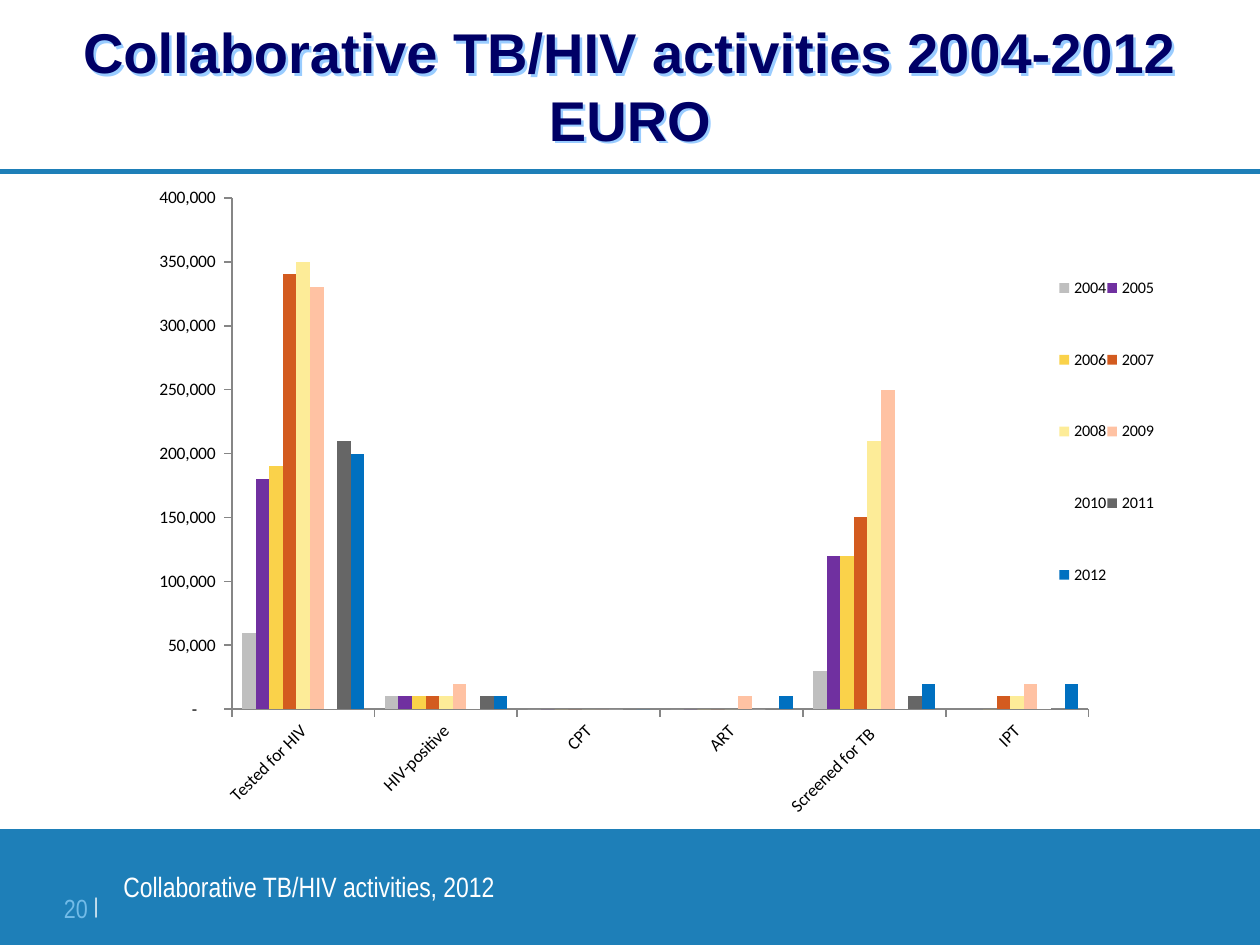
from lxml import etree
from pptx import Presentation
from pptx.chart.data import CategoryChartData
from pptx.dml.color import RGBColor
from pptx.enum.chart import XL_CHART_TYPE, XL_LEGEND_POSITION, XL_TICK_MARK
from pptx.enum.shapes import MSO_CONNECTOR, MSO_SHAPE
from pptx.enum.text import MSO_ANCHOR, MSO_AUTO_SIZE, PP_ALIGN
from pptx.oxml import parse_xml
from pptx.oxml.ns import nsdecls, qn
from pptx.util import Inches, Pt

COLUMN = XL_CHART_TYPE.COLUMN_CLUSTERED
RIGHT = XL_LEGEND_POSITION.RIGHT
OUT = XL_TICK_MARK.OUTSIDE
STRAIGHT = MSO_CONNECTOR.STRAIGHT
RECT = MSO_SHAPE.RECTANGLE
MIDDLE = MSO_ANCHOR.MIDDLE
NO_FIT = MSO_AUTO_SIZE.NONE
CENTRE, TO_RIGHT, TO_LEFT = PP_ALIGN.CENTER, PP_ALIGN.RIGHT, PP_ALIGN.LEFT

WIDE, HIGH = 10, 7.5
CHART = (1.06, 1.39, 8.27, 5.2)
HUES = {"band": "1E7FB8", "navy": "000066", "glow": "99CCFF", "pale": "72BBE8",
        "white": "FFFFFF", "black": "000000", "axis": "868686"}
GROUPS = ["Tested for HIV", "HIV-positive", "CPT", "ART", "Screened for TB ", "IPT"]
YEARS = {
    "2004": ("BFBFBF", [60000, 10000, 0, 0, 30000, None]),
    "2005": ("7030A0", [180000, 10000, 0, 0, 120000, None]),
    "2006": ("FAD24A", [190000, 10000, 0, 0, 120000, 0]),
    "2007": ("D35B1F", [340000, 10000, 0, 0, 150000, 10000]),
    "2008": ("FDEC98", [350000, 10000, 0, 0, 210000, 10000]),
    "2009": ("FFC2A3", [330000, 20000, 0, 10000, 250000, 20000]),
    "2010": ("FFFFFF", [190000, 10000, 0, 0, 10000, 10000]),
    "2011": ("666666", [210000, 10000, 0, 0, 10000, 0]),
    "2012": ("0070C0", [200000, 10000, 0, 10000, 20000, 20000]),
}


def tint(hue):
    return RGBColor.from_string(HUES.get(hue, hue))


def box(left, top, width, height):
    return [Inches(n) for n in (left, top, width, height)]


def style(font, size, hue, face):
    font.size, font.name = Pt(size), face
    font.color.rgb = tint(hue)


def clear(frame):
    """Zero the margins and keep the frame at its set size."""
    frame.margin_left = frame.margin_right = 0
    frame.margin_top = frame.margin_bottom = 0
    frame.word_wrap, frame.auto_size = True, NO_FIT


def add_run(para, text, size, hue, face):
    run = para.add_run()
    run.text = text
    style(run.font, size, hue, face)
    return run


def add_title(slide, lines):
    title = slide.shapes.title
    title.left, title.top, title.width, title.height = box(0, 0, WIDE, 1.35)
    title.fill.background()
    title._element.spPr.append(parse_xml(
        f'<a:effectLst {nsdecls("a")}>'
        '<a:outerShdw dist="25400" dir="2700000" algn="ctr" rotWithShape="0">'
        f'<a:srgbClr val="{HUES["glow"]}"/></a:outerShdw></a:effectLst>'))
    frame = title.text_frame
    clear(frame)
    frame.vertical_anchor = MIDDLE
    para = frame.paragraphs[0]
    para.alignment = CENTRE
    for row, line in enumerate(lines):
        if row:
            para.add_line_break()
        add_run(para, line, 32, "navy", "Arial").font.bold = True


def add_rule(slide, top):
    rule = slide.shapes.add_connector(
        STRAIGHT, 0, Inches(top), Inches(WIDE), Inches(top))
    rule.line.color.rgb, rule.line.width = tint("band"), Pt(3)
    etree.SubElement(rule._element.spPr, qn("a:effectLst"))


def add_band(slide, top):
    band = slide.shapes.add_shape(RECT, *box(0, top, WIDE, HIGH - top))
    band.shadow.inherit = False
    band.fill.solid()
    band.fill.fore_color.rgb = tint("band")
    band.line.fill.background()


def add_note(slide, place, parts, align):
    frame = slide.shapes.add_textbox(*box(*place)).text_frame
    clear(frame)
    para = frame.paragraphs[0]
    para.alignment = align
    return [add_run(para, text, size, hue, "Arial Narrow")
            for text, size, hue in parts]


def set_place(part, place, inner=False):
    """Fix a chart part at left, top, width, height in inches in the chart."""
    old = part.find(qn("c:layout"))
    if old is not None:
        part.remove(old)
    target = '<c:layoutTarget val="inner"/>' if inner else ""
    modes = '<c:xMode val="edge"/><c:yMode val="edge"/>'
    spans = CHART[2:] * 2
    sides = "".join(f'<c:{key} val="{size / span:.4f}"/>'
                    for key, size, span in zip("xywh", place, spans))
    layout = parse_xml(f'<c:layout {nsdecls("c")}><c:manualLayout>{target}'
                       f'{modes}{sides}</c:manualLayout></c:layout>')
    if inner:
        part.insert(0, layout)
    else:
        part.find(qn("c:legendPos")).addnext(layout)


def set_axis(axis):
    axis.has_major_gridlines = False
    axis.major_tick_mark = OUT
    axis.format.line.color.rgb = tint("axis")
    axis.format.line.width = Pt(1)
    style(axis.tick_labels.font, 10, "black", "Calibri")


def add_chart(slide):
    data = CategoryChartData()
    data.categories = GROUPS
    for year, (_, counts) in YEARS.items():
        data.add_series(year, counts)
    chart = slide.shapes.add_chart(COLUMN, *box(*CHART), data).chart
    chart.has_title = False
    style(chart.font, 10, "black", "Calibri")

    plot = chart.plots[0]
    plot.gap_width, plot.overlap, plot.vary_by_categories = 150, 0, False
    for bars, (hue, _) in zip(plot.series, YEARS.values()):
        bars.format.fill.solid()
        bars.format.fill.fore_color.rgb = tint(hue)
        bars.invert_if_negative = False

    groups, scale = chart.category_axis, chart.value_axis
    for axis in (groups, scale):
        set_axis(axis)
    turn = groups._element.find(qn("c:txPr")).find(qn("a:bodyPr"))
    turn.set("rot", "-2700000")
    turn.set("vert", "horz")
    scale.minimum_scale, scale.maximum_scale, scale.major_unit = 0, 400000, 50000
    scale.tick_labels.number_format = '_(* #,##0_);_(* \\(#,##0\\);_(* "-"??_);_('
    scale.tick_labels.number_format_is_linked = False

    chart.has_legend = True
    legend = chart.legend
    legend.position, legend.include_in_layout = RIGHT, False
    style(legend.font, 9.2, "black", "Calibri")
    set_place(legend._element, (7.34, 0.4, 0.77, 3.27))
    area = chart._chartSpace.chart.plotArea
    set_place(area, (0.78, 0.18, 6.8, 4.06), inner=True)


def main():
    deck = Presentation()
    deck.slide_width, deck.slide_height = Inches(WIDE), Inches(HIGH)
    slide = deck.slides.add_slide(deck.slide_layouts[5])
    add_rule(slide, 1.36)
    add_band(slide, 6.58)
    add_note(slide, (0.98, 6.9, 4.64, 0.47),
             [("Collaborative TB/HIV activities, 2012", 16, "white")], TO_LEFT)
    bar = add_note(slide, (0.39, 7, 0.39, 0.36),
                   [("20 ", 15, "pale"), ("|", 21, "white")], TO_RIGHT)[-1]
    bar.font._element.set("baseline", "14000")
    add_title(slide, ["Collaborative TB/HIV activities 2004-2012", "EURO"])
    add_chart(slide)
    deck.save("out.pptx")


if __name__ == "__main__":
    main()
